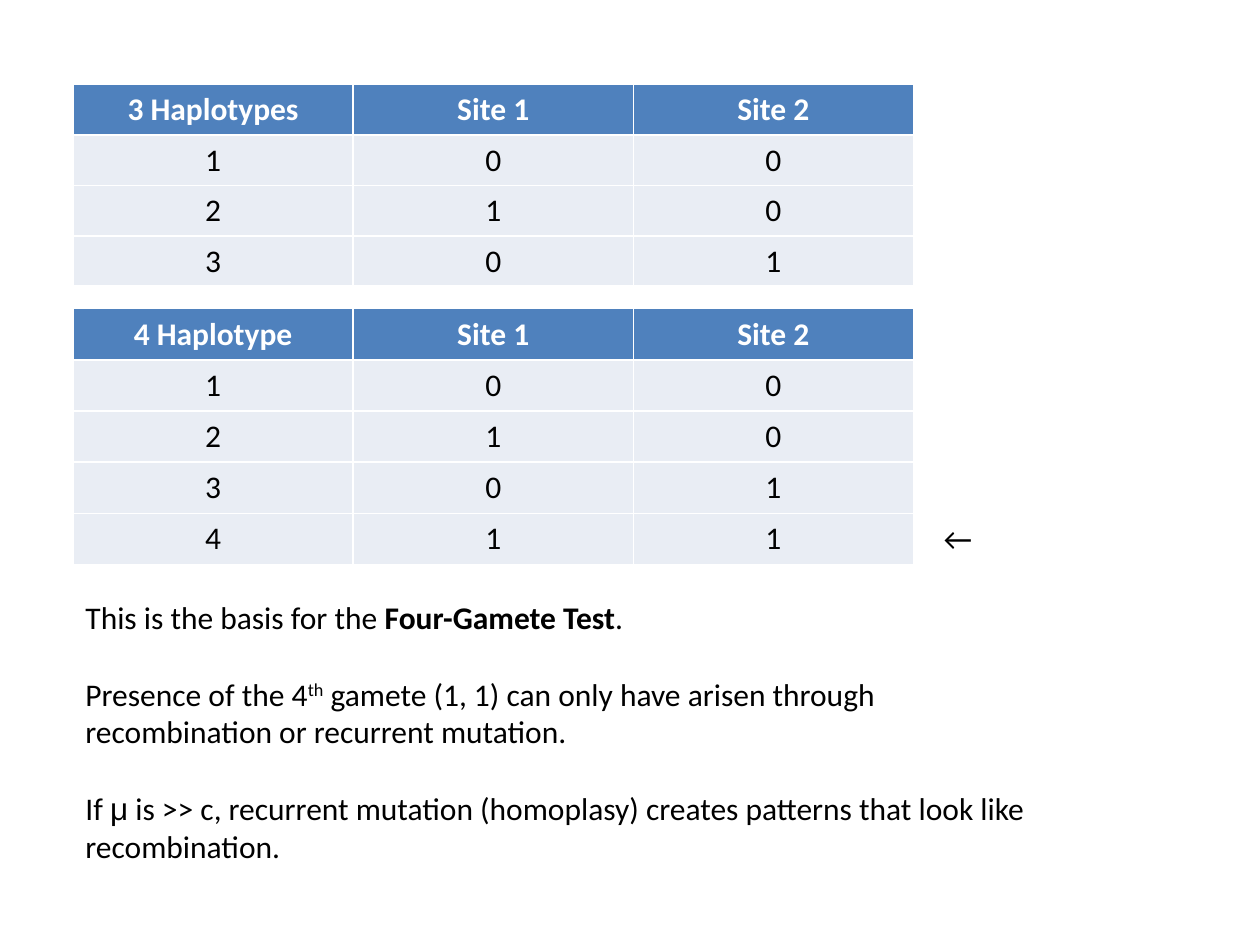
"""Build a slide that explains the four-gamete test with two haplotype tables."""
from pptx import Presentation
from pptx.dml.color import RGBColor
from pptx.enum.text import MSO_AUTO_SIZE, PP_ALIGN
from pptx.util import Inches, Pt

CENTER = PP_ALIGN.CENTER
GROW = MSO_AUTO_SIZE.SHAPE_TO_FIT_TEXT
COLORS = {"head": "4F81BD", "row": "E9EDF4", "white": "FFFFFF", "black": "000000"}
LEFT = 0.58
SITES = [(0, 0), (1, 0), (0, 1), (1, 1)]
NOTES = [
    [("This is the basis for the ", {}), ("Four-Gamete Test", {"bold": True}), (".", {})],
    [
        ("Presence of the 4", {}),
        ("th", {"raised": True}),
        (" gamete (1, 1) can only have arisen through recombination or recurrent mutation.", {}),
    ],
    [
        ("If ", {}),
        ("μ", {"face": "Arial"}),
        (" is >> c, recurrent mutation (homoplasy) creates patterns that look like recombination.", {}),
    ],
]


def color(name):
    return RGBColor.from_string(COLORS[name])


def add_text(para, text, face="Calibri", size=18, ink="black", bold=False, raised=False):
    run = para.add_run()
    run.text = text
    font = run.font
    font.name, font.size, font.bold = face, Pt(size), bold
    font.color.rgb = color(ink)
    if raised:
        run._r.get_or_add_rPr().set("baseline", "30000")


def add_box(slide, left, top, width, height, paras, wrap=True, gap=0):
    box = slide.shapes.add_textbox(Inches(left), Inches(top), Inches(width), Inches(height))
    frame = box.text_frame
    frame.word_wrap = wrap
    frame.auto_size = GROW
    for i, parts in enumerate(paras):
        para = frame.add_paragraph() if i else frame.paragraphs[0]
        if i:
            para.space_before = Pt(gap)
        for text, style in parts:
            add_text(para, text, **style)


def fill_cell(cell, text, fill, **style):
    cell.fill.solid()
    cell.fill.fore_color.rgb = color(fill)
    para = cell.text_frame.paragraphs[0]
    para.alignment = CENTER
    add_text(para, str(text), **style)


def add_grid(slide, top, height, title, sites):
    heads = [title, "Site 1", "Site 2"]
    frame = slide.shapes.add_table(
        len(sites) + 1, len(heads), Inches(LEFT), Inches(top), Inches(6.67), Inches(height)
    )
    table = frame.table
    table.horz_banding = False
    for col, head in enumerate(heads):
        fill_cell(table.cell(0, col), head, "head", ink="white", bold=True)
    for row, pair in enumerate(sites, 1):
        for col, value in enumerate((row, *pair)):
            fill_cell(table.cell(row, col), value, "row")


def main():
    deck = Presentation()
    deck.slide_width, deck.slide_height = Inches(10), Inches(7.5)
    slide = deck.slides.add_slide(deck.slide_layouts[6])
    add_box(slide, LEFT, 4.7, 7.94, 2.22, NOTES, gap=22)
    add_grid(slide, 0.67, 1.6, "3 Haplotypes", SITES[:3])
    add_grid(slide, 2.45, 2.03, "4 Haplotype", SITES)
    add_box(slide, 7.39, 4.07, 0.45, 0.4, [[("←", {})]], wrap=False)
    deck.save("out.pptx")


if __name__ == "__main__":
    main()
